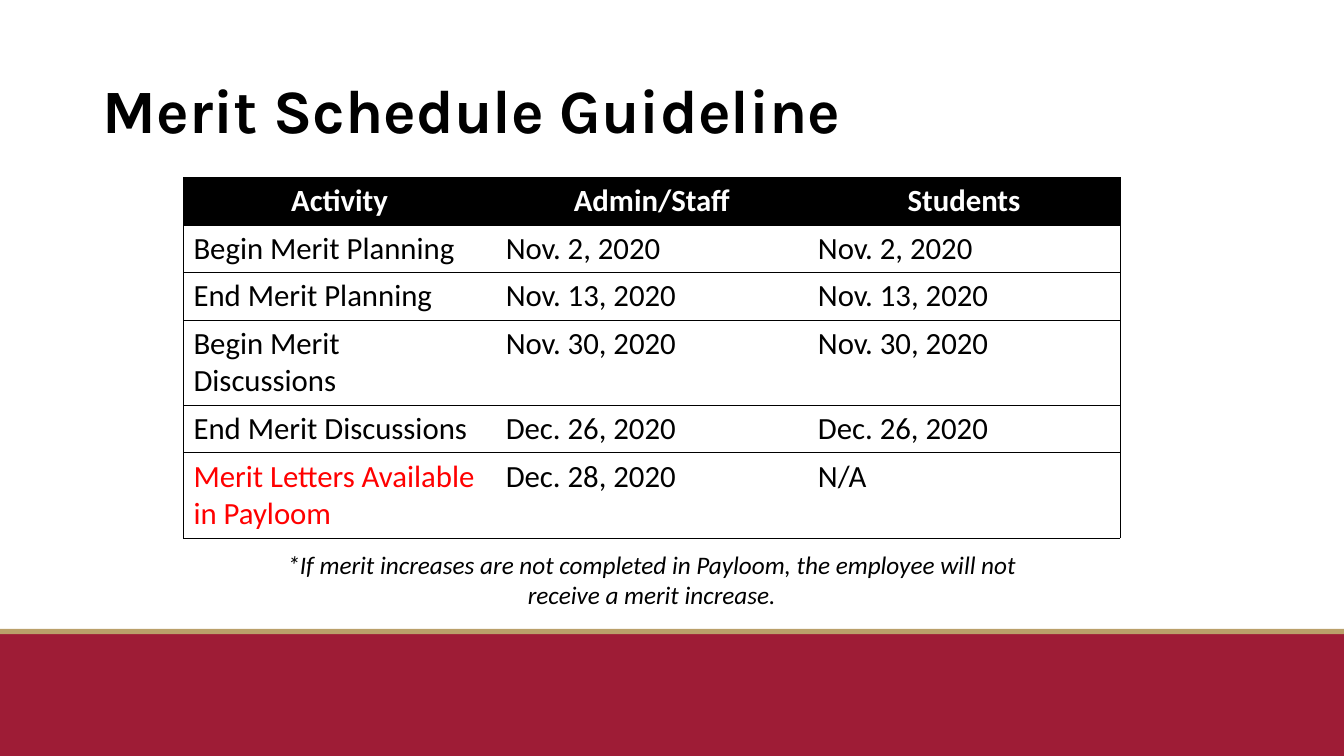
from dataclasses import dataclass

import lxml.etree
import pptx
import pptx.dml.color
import pptx.enum.shapes
import pptx.enum.text
import pptx.oxml.ns
import pptx.shapes.base
import pptx.slide
import pptx.table
import pptx.text.text
import pptx.util

COLORS = {
    "black": "000000",
    "white": "FFFFFF",
    "red": "FF0000",
    "crimson": "9E1C36",
    "gold": "BAA06A",
}
SLIDE_WIDTH = pptx.util.Inches(13.33)
SLIDE_HEIGHT = pptx.util.Inches(7.5)
CENTER = pptx.enum.text.PP_ALIGN.CENTER
LEFT = pptx.enum.text.PP_ALIGN.LEFT
MIDDLE = pptx.enum.text.MSO_ANCHOR.MIDDLE
TOP = pptx.enum.text.MSO_ANCHOR.TOP


@dataclass(frozen=True)
class Box:
    """A rectangle in percent of the slide's width and height."""
    left: float
    top: float
    width: float
    height: float

    def lengths(self) -> tuple[int, int, int, int]:
        return (
            round(self.left * SLIDE_WIDTH / 100),
            round(self.top * SLIDE_HEIGHT / 100),
            round(self.width * SLIDE_WIDTH / 100),
            round(self.height * SLIDE_HEIGHT / 100),
        )


@dataclass(frozen=True)
class Band:
    box: Box
    color: str


@dataclass(frozen=True)
class TextStyle:
    size: float
    font: str = "Calibri"
    color: str = "black"
    bold: bool = False
    italic: bool = False
    alignment: pptx.enum.text.PP_ALIGN = LEFT
    line_spacing: float = 1.0


@dataclass(frozen=True)
class TextBlock:
    box: Box
    text: str
    style: TextStyle
    anchor: pptx.enum.text.MSO_ANCHOR


@dataclass(frozen=True)
class ScheduleRow:
    activity: str
    staff: str
    students: str
    activity_color: str = "black"


BANDS = [
    Band(Box(0, 83.87, 100, 16.13), "crimson"),
    Band(Box(0, 83.2, 100, 0.67), "gold"),
]
TEXT_BLOCKS = [
    TextBlock(
        Box(6.9, 5.33, 86.27, 19.33),
        "Merit Schedule Guideline",
        TextStyle(44, font="Karla", bold=True, line_spacing=0.9),
        MIDDLE,
    ),
    TextBlock(
        Box(18.83, 72, 59.34, 9.47),
        "*If merit increases are not completed in Payloom, "
        "the employee will not receive a merit increase.",
        TextStyle(18, italic=True, alignment=CENTER),
        TOP,
    ),
]
TABLE_BOX = Box(13.65, 23.47, 69.69, 32.8)
SCHEDULE = [
    ScheduleRow("Activity", "Admin/Staff", "Students", "white"),
    ScheduleRow("Begin Merit Planning", "Nov. 2, 2020", "Nov. 2, 2020"),
    ScheduleRow("End Merit Planning", "Nov. 13, 2020", "Nov. 13, 2020"),
    ScheduleRow("Begin Merit Discussions", "Nov. 30, 2020", "Nov. 30, 2020"),
    ScheduleRow("End Merit Discussions", "Dec. 26, 2020", "Dec. 26, 2020"),
    ScheduleRow("Merit Letters Available in Payloom", "Dec. 28, 2020", "N/A", "red"),
]


def rgb(name: str) -> pptx.dml.color.RGBColor:
    return pptx.dml.color.RGBColor.from_string(COLORS[name])


def write(frame: pptx.text.text.TextFrame, text: str, style: TextStyle) -> None:
    paragraph = frame.paragraphs[0]
    paragraph.text = text
    paragraph.alignment = style.alignment
    paragraph.line_spacing = style.line_spacing
    paragraph.font.name = style.font
    paragraph.font.size = pptx.util.Pt(style.size)
    paragraph.font.bold = style.bold
    paragraph.font.italic = style.italic
    paragraph.font.color.rgb = rgb(style.color)


def draw_band(slide: pptx.slide.Slide, band: Band) -> None:
    shape = slide.shapes.add_shape(
        pptx.enum.shapes.MSO_SHAPE.RECTANGLE, *band.box.lengths()
    )
    shape.shadow.inherit = False
    shape.fill.solid()
    shape.fill.fore_color.rgb = rgb(band.color)
    shape.line.fill.background()


def draw_text(slide: pptx.slide.Slide, block: TextBlock) -> None:
    frame = slide.shapes.add_textbox(*block.box.lengths()).text_frame
    frame.word_wrap = True
    frame.vertical_anchor = block.anchor
    write(frame, block.text, block.style)


def set_borders(cell: pptx.table._Cell, left: bool, right: bool) -> None:
    """Rule the cell above and below, and on the sides asked for."""
    properties = cell._tc.get_or_add_tcPr()
    for side, visible in {"L": left, "R": right, "T": True, "B": True}.items():
        line = lxml.etree.SubElement(properties, pptx.oxml.ns.qn(f"a:ln{side}"))
        line.set("w", str(pptx.util.Pt(0.5)))
        kind = "a:solidFill" if visible else "a:noFill"
        fill = lxml.etree.SubElement(line, pptx.oxml.ns.qn(kind))
        if visible:
            color = lxml.etree.SubElement(fill, pptx.oxml.ns.qn("a:srgbClr"))
            color.set("val", COLORS["black"])


def draw_schedule(slide: pptx.slide.Slide) -> None:
    table = slide.shapes.add_table(len(SCHEDULE), 3, *TABLE_BOX.lengths()).table
    table.horz_banding = False
    for row_index, row in enumerate(SCHEDULE):
        is_header = row_index == 0
        text_color = "white" if is_header else "black"
        entries = [
            (row.activity, row.activity_color),
            (row.staff, text_color),
            (row.students, text_color),
        ]
        for column_index, (text, color) in enumerate(entries):
            cell = table.cell(row_index, column_index)
            set_borders(cell, left=column_index == 0, right=column_index == 2)
            if is_header:
                cell.fill.solid()
                cell.fill.fore_color.rgb = rgb("black")
            else:
                cell.fill.background()
            alignment = CENTER if is_header else LEFT
            style = TextStyle(22, color=color, bold=is_header, alignment=alignment)
            write(cell.text_frame, text, style)


def main() -> None:
    presentation = pptx.Presentation()
    presentation.slide_width = SLIDE_WIDTH
    presentation.slide_height = SLIDE_HEIGHT
    slide = presentation.slides.add_slide(presentation.slide_layouts[6])
    slide.background.fill.solid()
    slide.background.fill.fore_color.rgb = rgb("white")
    for band in BANDS:
        draw_band(slide, band)
    draw_schedule(slide)
    for block in TEXT_BLOCKS:
        draw_text(slide, block)
    presentation.save("out.pptx")


if __name__ == "__main__":
    main()
